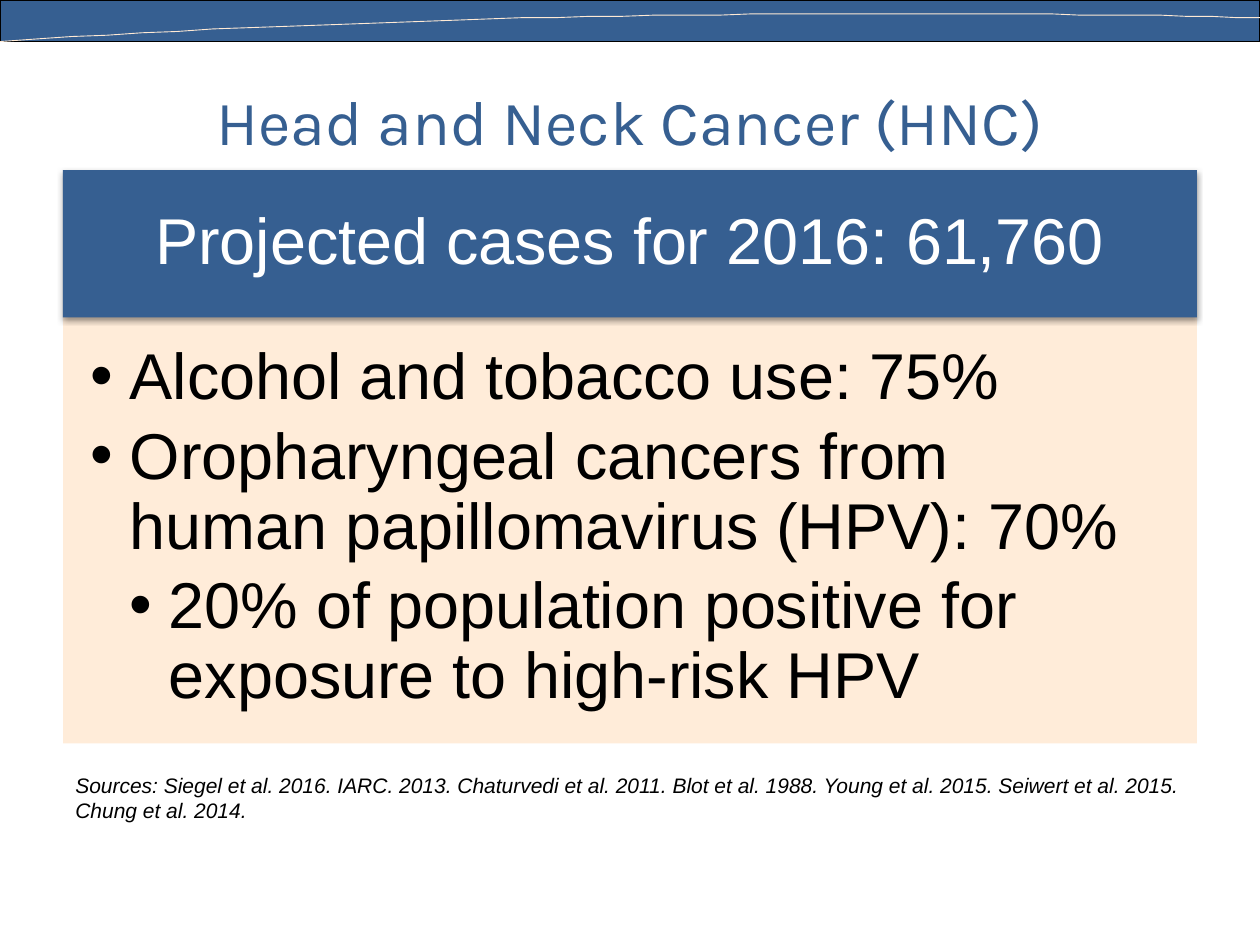
from lxml import etree
from pptx import Presentation
from pptx import util as u
from pptx.dml import color
from pptx.enum import shapes, text
from pptx.oxml import ns

PX = 9144  # EMU in one px, 100 px to the inch
BLUE, CREAM, BLACK, WHITE = "365F91", "FFEAD5", "000000", "FFFFFF"
ITEMS = [
    (0, "Alcohol and tobacco use: 75%"),
    (0, "Oropharyngeal cancers from human papillomavirus (HPV): 70%"),
    (1, "20% of population positive for exposure to high-risk HPV"),
]
SOURCES = ("Sources: Siegel et al. 2016. IARC. 2013. Chaturvedi et al. 2011. "
           "Blot et al. 1988. Young et al. 2015. Seiwert et al. 2015. "
           "Chung et al. 2014.")


def px(n):
    return u.Emu(n * PX)


def rgb(code):
    return color.RGBColor.from_string(code)


def sub(parent, tag, **attrs):
    return etree.SubElement(parent, ns.qn(tag), attrs)


def paint(shape, code):
    shape.fill.solid()
    shape.fill.fore_color.rgb = rgb(code)


def place(shape, left, top, width, height):
    shape.left, shape.top = px(left), px(top)
    shape.width, shape.height = px(width), px(height)


def frame(shape, insets, anchor):
    tf = shape.text_frame
    tf.word_wrap = True
    tf.auto_size = text.MSO_AUTO_SIZE.NONE
    tf.vertical_anchor = anchor
    tf.margin_left, tf.margin_top, tf.margin_right, tf.margin_bottom = map(px, insets)
    return tf


def style(para, size, code, face="Arial", align=text.PP_ALIGN.LEFT, line=1.0, after=0):
    para.alignment = align
    para.line_spacing = line
    para.space_before, para.space_after = u.Pt(0), u.Pt(after)
    for run in para.runs:
        run.font.size, run.font.name = u.Pt(size), face
        run.font.color.rgb = rgb(code)


def add_bar(slide, left, top, width, height):
    bar = slide.shapes.add_shape(shapes.MSO_SHAPE.RECTANGLE,
                                 px(left), px(top), px(width), px(height))
    bar.shadow.inherit = False
    paint(bar, BLUE)
    return bar


def add_curve(slide, pts, steps=40):
    """Draw a cubic curve through its four control points."""
    def at(t):
        w = ((1 - t) ** 3, 3 * t * (1 - t) ** 2, 3 * t * t * (1 - t), t ** 3)
        return tuple(sum(k * p[i] for k, p in zip(w, pts)) for i in (0, 1))

    dots = [at(n / steps) for n in range(steps + 1)]
    path = slide.shapes.build_freeform(*dots[0], scale=PX)
    path.add_line_segments(dots[1:], close=False)
    curve = path.convert_to_shape()
    curve.shadow.inherit = False
    curve.fill.background()
    curve.line.color.rgb = rgb(CREAM)
    curve.line.width = u.Pt(0.5)


def add_title(slide, label):
    title = slide.shapes.title
    place(title, 50, 33, 900, 125)
    tf = frame(title, (10, 5, 10, 5), text.MSO_ANCHOR.MIDDLE)
    tf.text = label
    style(tf.paragraphs[0], 36, BLUE, "Karla", text.PP_ALIGN.CENTER)


def add_head(slide, label):
    head = add_bar(slide, 50, 135, 900, 117)
    head.line.fill.background()
    glow = sub(head.element.spPr.find(ns.qn("a:effectLst")), "a:outerShdw",
               blurRad="40000", dist="20000", dir="5400000", rotWithShape="0")
    sub(sub(glow, "a:srgbClr", val=BLACK), "a:alpha", val="38000")
    tf = frame(head, (29, 16, 29, 16), text.MSO_ANCHOR.MIDDLE)
    tf.text = label
    style(tf.paragraphs[0], 37, WHITE, align=text.PP_ALIGN.CENTER, line=0.9)


def add_list(slide, items):
    body = slide.placeholders[1]
    place(body, 50, 251, 900, 339)
    paint(body, CREAM)
    tint = body.element.spPr.find(".//" + ns.qn("a:srgbClr"))
    sub(tint, "a:alpha", val="90000")
    tf = frame(body, (22, 22, 29, 32), text.MSO_ANCHOR.TOP)
    tf.text = "\n".join(label for _, label in items)
    for para, (level, _) in zip(tf.paragraphs, items):
        para.level = level
        props = para._p.get_or_add_pPr()
        props.set("marL", str(px(31 * (level + 1))))
        props.set("indent", str(px(-31)))
        sub(props, "a:buFont", typeface="Arial")
        sub(props, "a:buChar", char="•")
        style(para, 37, BLACK, line=0.9, after=5.5)


def add_note(slide, label):
    note = slide.shapes.add_textbox(px(50), px(608), px(917), px(51))
    tf = frame(note, (10, 5, 10, 5), text.MSO_ANCHOR.TOP)
    tf.text = label
    style(tf.paragraphs[0], 12, BLACK, after=6)
    tf.paragraphs[0].runs[0].font.italic = True


def main():
    prs = Presentation()
    prs.slide_width, prs.slide_height = px(1000), px(750)
    slide = prs.slides.add_slide(prs.slide_layouts[1])

    # Top band with its curve
    band = add_bar(slide, 0, 0, 1000, 33)
    band.line.color.rgb = rgb(BLACK)
    band.line.width = u.Pt(0.75)
    add_curve(slide, [(1000, 14), (744, 8), (379, 8), (0, 33)])

    # Title, panel and sources
    add_title(slide, "Head and Neck Cancer (HNC)")
    add_head(slide, "Projected cases for 2016: 61,760")
    add_list(slide, ITEMS)
    add_note(slide, SOURCES)

    prs.save("out.pptx")


if __name__ == "__main__":
    main()
